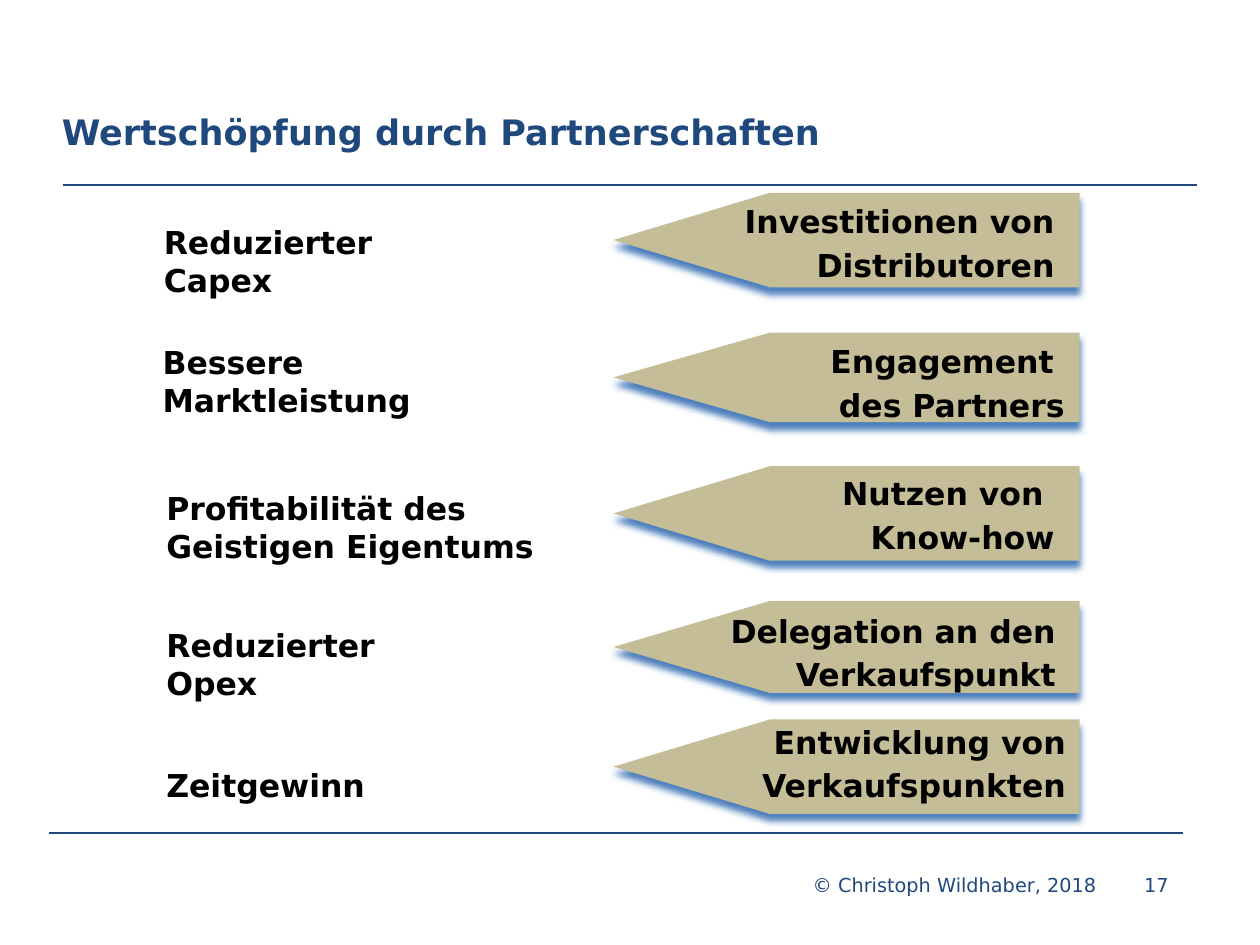
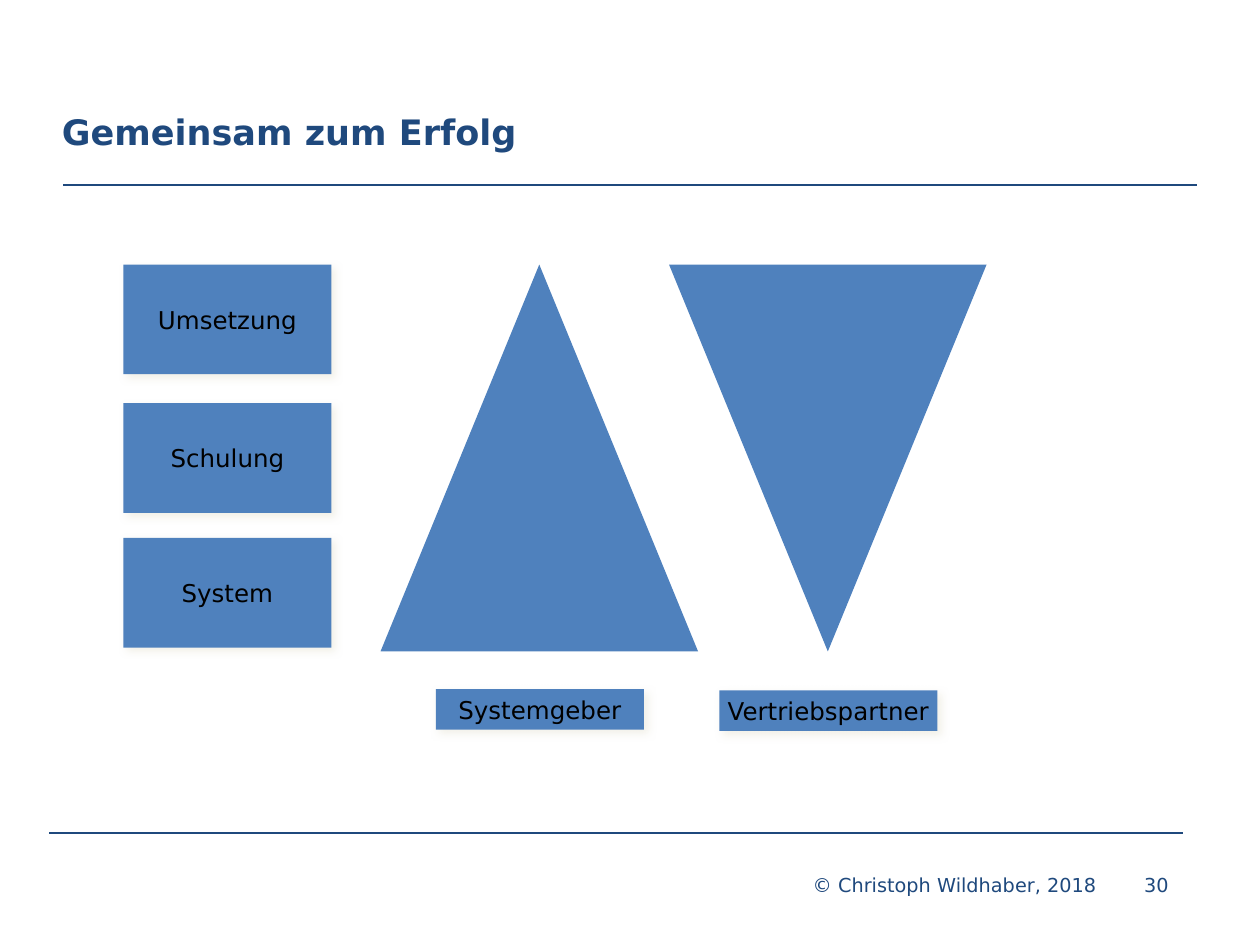
"""Builds two slides on value creation through sales partnerships."""
from dataclasses import dataclass
from typing import Optional

from lxml import etree
from pptx import Presentation
from pptx.dml.color import RGBColor
from pptx.enum.shapes import MSO_CONNECTOR, MSO_SHAPE
from pptx.enum.text import MSO_ANCHOR, MSO_AUTO_SIZE, PP_ALIGN
from pptx.oxml.ns import qn
from pptx.util import Inches, Pt

NAVY = RGBColor(0x1F, 0x49, 0x7D)
BLUE = RGBColor(0x4F, 0x81, 0xBD)
SAND = RGBColor(0xC4, 0xBD, 0x97)
CREAM = RGBColor(0xEE, 0xEC, 0xE1)
BLACK = RGBColor(0, 0, 0)
FONT = "DejaVu Sans"

LEFT, CENTER, RIGHT = PP_ALIGN.LEFT, PP_ALIGN.CENTER, PP_ALIGN.RIGHT
TOP, MIDDLE = MSO_ANCHOR.TOP, MSO_ANCHOR.MIDDLE
FIXED, GROW = MSO_AUTO_SIZE.NONE, MSO_AUTO_SIZE.SHAPE_TO_FIT_TEXT
STRAIGHT = MSO_CONNECTOR.STRAIGHT
PENTAGON, TRIANGLE = MSO_SHAPE.PENTAGON, MSO_SHAPE.ISOSCELES_TRIANGLE
ROUNDED = MSO_SHAPE.ROUNDED_RECTANGLE

TITLE_ONLY_LAYOUT = 5
TIGHT_INSETS = (0.09, 0.04, 0.09, 0.04)
NORMAL_INSETS = (0.1, 0.05, 0.1, 0.05)
FOOTER_INSETS = (0.23, 0.05, 0, 0.05)
FOOTER_TAB = 2.63
ARROW_LEFT, ARROW_WIDTH, ARROW_POINT = 4.87, 3.7, 1.24
TRIANGLE_TOP, TRIANGLE_WIDTH, TRIANGLE_HEIGHT = 2.1, 2.52, 3.07


@dataclass(frozen=True)
class Box:
    """Position and size in inches."""
    left: float
    top: float
    width: float
    height: float

    def lengths(self) -> tuple:
        """Return left, top, width and height as lengths."""
        return tuple(map(Inches, (self.left, self.top, self.width, self.height)))


@dataclass(frozen=True)
class Shadow:
    """Outer shadow with lengths in points and direction in degrees."""
    color: RGBColor
    opacity: int
    blur: int
    distance: int
    direction: int


@dataclass(frozen=True)
class Benefit:
    """A benefit and the partner contribution whose arrow points to it."""
    benefit: str
    benefit_box: Box
    contribution: str
    contribution_box: Box
    arrow_top: float
    arrow_height: float


@dataclass(frozen=True)
class Label:
    """A filled box with a caption."""
    caption: str
    box: Box


ARROW_SHADOW = Shadow(BLUE, 100, 4, 4, 90)
LABEL_SHADOW = Shadow(CREAM, 75, 5, 3, 45)

BENEFITS = (
    Benefit("Reduzierter Capex", Box(1.21, 1.73, 2.63, 0.69),
            "Investitionen von Distributoren", Box(5.7, 1.52, 2.76, 0.77), 1.53, 0.75),
    Benefit("Bessere Marktleistung", Box(1.2, 2.68, 2.24, 0.69),
            "Engagement \vdes Partners", Box(4.53, 2.63, 4.01, 0.75), 2.64, 0.71),
    Benefit("Profitabilität des Geistigen Eigentums", Box(1.23, 3.84, 3.23, 0.69),
            "Nutzen von \nKnow-how", Box(5.7, 3.68, 2.76, 0.77), 3.7, 0.75),
    Benefit("Reduzierter Opex", Box(1.23, 4.93, 2.34, 0.69),
            "Delegation an den Verkaufspunkt", Box(5.63, 4.77, 2.84, 0.75), 4.77, 0.73),
    Benefit("Zeitgewinn", Box(1.23, 6.04, 2.61, 0.39),
            "Entwicklung von Verkaufspunkten", Box(5.79, 5.65, 2.76, 0.78), 5.71, 0.75),
)

STAGES = tuple(
    Label(caption, Box(0.98, top, 1.65, 0.87))
    for caption, top in (("Umsetzung", 2.1), ("Schulung", 3.2), ("System", 4.27))
)
PARTNERS = (
    Label("Systemgeber", Box(3.46, 5.47, 1.65, 0.32)),
    Label("Vertriebspartner", Box(5.71, 5.48, 1.73, 0.32)),
)


def write_text(frame, text: str, *, size: float, color: RGBColor = BLACK,
               bold: bool = False, align=LEFT, anchor=TOP, spacing: float = 1.0,
               insets: tuple = NORMAL_INSETS, wrap: bool = True, fit=FIXED) -> None:
    """Fill a text frame with uniformly formatted text."""
    frame.text = text
    frame.word_wrap = wrap
    frame.auto_size = fit
    frame.vertical_anchor = anchor
    (frame.margin_left, frame.margin_top,
     frame.margin_right, frame.margin_bottom) = map(Inches, insets)
    for paragraph in frame.paragraphs:
        paragraph.alignment = align
        paragraph.line_spacing = spacing
        for run in paragraph.runs:
            run.font.name = FONT
            run.font.size = Pt(size)
            run.font.bold = bold
            run.font.color.rgb = color


def add_text(slide, box: Box, text: str, **style):
    """Add a text box and return its text frame."""
    frame = slide.shapes.add_textbox(*box.lengths()).text_frame
    write_text(frame, text, **style)
    return frame


def add_rule(slide, left: float, top: float, weight: float) -> None:
    """Draw a horizontal rule nine inches long."""
    rule = slide.shapes.add_connector(
        STRAIGHT, Inches(left), Inches(top), Inches(left + 9), Inches(top))
    rule.line.color.rgb = NAVY
    rule.line.width = Pt(weight)
    etree.SubElement(rule._element.spPr, qn("a:effectLst"))


def add_filled(slide, kind, box: Box, fill: RGBColor, shadow: Optional[Shadow] = None):
    """Add a preset shape without outline, optionally with a shadow."""
    shape = slide.shapes.add_shape(kind, *box.lengths())
    shape.fill.solid()
    shape.fill.fore_color.rgb = fill
    shape.line.fill.background()
    shape.shadow.inherit = False
    if shadow:
        effects = shape._element.spPr.find(qn("a:effectLst"))
        outer = etree.SubElement(
            effects, qn("a:outerShdw"), blurRad=str(Pt(shadow.blur)),
            dist=str(Pt(shadow.distance)), dir=str(shadow.direction * 60000),
            algn="ctr", rotWithShape="0")
        color = etree.SubElement(outer, qn("a:srgbClr"), val=str(shadow.color))
        etree.SubElement(color, qn("a:alpha"), val=str(shadow.opacity * 1000))
    return shape


def add_base_slide(deck, title: str, number: int):
    """Add a slide with the shared rules, title and footer."""
    slide = deck.slides.add_slide(deck.slide_layouts[TITLE_ONLY_LAYOUT])
    heading = slide.shapes.title
    heading.left, heading.top, heading.width, heading.height = Box(
        0.39, 0.83, 9.11, 0.64).lengths()
    write_text(heading.text_frame, title, size=20, color=NAVY, bold=True)
    add_rule(slide, 0.39, 6.61, 1.5)
    add_rule(slide, 0.5, 1.47, 1.25)
    footer = add_text(slide, Box(6.22, 6.83, 3.28, 0.39),
                      f"© Christoph Wildhaber, 2018\t{number}",
                      size=11, color=NAVY, anchor=MIDDLE, insets=FOOTER_INSETS)
    properties = footer.paragraphs[0]._p.get_or_add_pPr()
    tabs = etree.SubElement(properties, qn("a:tabLst"))
    etree.SubElement(tabs, qn("a:tab"), pos=str(Inches(FOOTER_TAB)), algn="l")
    return slide


def add_benefit(slide, item: Benefit) -> None:
    """Draw a benefit and the arrow with the partner contribution."""
    style = dict(size=18, bold=True, insets=TIGHT_INSETS, fit=GROW)
    add_text(slide, item.benefit_box, item.benefit, **style)
    arrow = add_filled(
        slide, PENTAGON, Box(ARROW_LEFT, item.arrow_top, ARROW_WIDTH, item.arrow_height),
        SAND, ARROW_SHADOW)
    arrow.adjustments[0] = ARROW_POINT / item.arrow_height
    arrow._element.spPr.find(qn("a:xfrm")).set("flipH", "1")
    add_text(slide, item.contribution_box, item.contribution,
             align=RIGHT, spacing=1.15, **style)


def add_label(slide, label: Label) -> None:
    """Draw a blue box with its centred caption."""
    shape = add_filled(slide, ROUNDED, label.box, BLUE, LABEL_SHADOW)
    shape.adjustments[0] = 0
    write_text(shape.text_frame, label.caption, size=14,
               align=CENTER, anchor=MIDDLE, wrap=False)


def build_value_slide(deck) -> None:
    """Build the slide on value creation."""
    slide = add_base_slide(deck, "Wertschöpfung durch Partnerschaften", 17)
    for item in BENEFITS:
        add_benefit(slide, item)


def build_success_slide(deck) -> None:
    """Build the slide on shared success."""
    slide = add_base_slide(deck, "Gemeinsam zum Erfolg", 30)
    for left, rotation in ((3.02, 0), (5.31, 180)):
        triangle = add_filled(
            slide, TRIANGLE, Box(left, TRIANGLE_TOP, TRIANGLE_WIDTH, TRIANGLE_HEIGHT), BLUE)
        triangle.rotation = rotation
    for label in STAGES + PARTNERS:
        add_label(slide, label)


def main() -> None:
    """Build and save the presentation."""
    deck = Presentation()
    deck.slide_width, deck.slide_height = Inches(10), Inches(7.5)
    build_value_slide(deck)
    build_success_slide(deck)
    deck.save("out.pptx")


if __name__ == "__main__":
    main()
